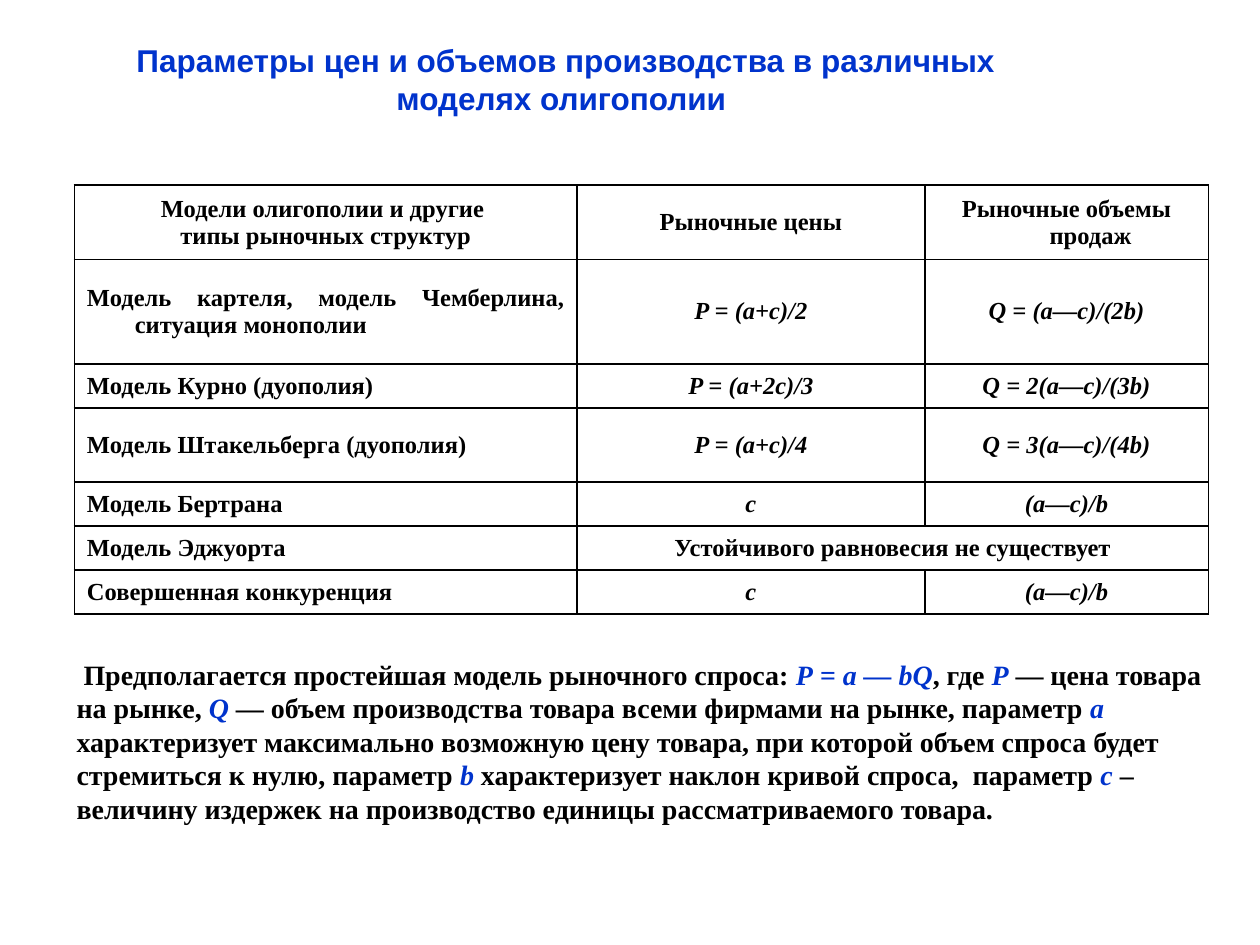
import pptx
import pptx.dml.color
import pptx.enum.text
import pptx.oxml
import pptx.oxml.ns
import pptx.util

BLACK = pptx.dml.color.RGBColor(0x00, 0x00, 0x00)
WHITE = pptx.dml.color.RGBColor(0xFF, 0xFF, 0xFF)
BLUE = pptx.dml.color.RGBColor(0x00, 0x33, 0xCC)
SERIF = "Times New Roman"
ALIGN = pptx.enum.text.PP_ALIGN
WIDTH, HEIGHT = pptx.util.Inches(10), pptx.util.Inches(7.5)
HANGING = pptx.util.Inches(0.38)

TITLE = "Параметры цен и объемов производства в различных моделях олигополии "
COLUMN_SHARES = (3.99, 2.76, 2.25)
ROW_SHARES = (0.59, 0.83, 0.35, 0.59, 0.35, 0.35, 0.35)
HEADER = ("Модели олигополии и другие \nтипы рыночных структур", "Рыночные цены", "Рыночные объемы продаж")
MODELS = (
    ("Модель картеля, модель Чемберлина, ситуация монополии", "P = (a+c)/2", "Q = (a—c)/(2b)"),
    ("Модель Курно (дуополия)", "P = (a+2c)/3", "Q = 2(a—c)/(3b)"),
    ("Модель Штакельберга (дуополия)", "P = (a+c)/4", "Q = 3(a—c)/(4b)"),
    ("Модель Бертрана ", "c", "(a—c)/b"),
    ("Модель Эджуорта ", "Устойчивого равновесия не существует"),
    ("Совершенная конкуренция", "c", "(a—c)/b"),
)
DEMAND_NOTE = (
    " Предполагается простейшая модель рыночного спроса: ", "Р = a — bQ",
    ", где ", "Р",
    " — цена товара на рынке, ", "Q ",
    "— объем производства товара всеми фирмами на рынке, параметр ", "а",
    " характеризует максимально возможную цену товара, при которой объем спроса "
    "будет стремиться к нулю, параметр ", "b",
    " характеризует наклон кривой спроса,  параметр ", "с",
    " –  величину издержек на производство единицы рассматриваемого товара.",
)


def share_box(left, top, width, height):
    """Turn shares of the slide's size into lengths."""
    return int(left * WIDTH), int(top * HEIGHT), int(width * WIDTH), int(height * HEIGHT)


def add_run(paragraph, text, size=14, font=SERIF, color=BLACK, italic=False):
    """Append one bold formatted run to a paragraph."""
    run = paragraph.add_run()
    run.text = text
    run.font.size = pptx.util.Pt(size)
    run.font.name = font
    run.font.bold = True
    run.font.italic = italic
    run.font.color.rgb = color


def add_text_paragraph(slide, box, align):
    """Add a wrapping text box and return its paragraph."""
    frame = slide.shapes.add_textbox(*box).text_frame
    frame.word_wrap = True
    paragraph = frame.paragraphs[0]
    paragraph.alignment = align
    return paragraph


def set_borders(cell):
    """Draw a thin black line on every side of a cell."""
    properties = cell._tc.get_or_add_tcPr()
    namespace = pptx.oxml.ns.nsdecls("a")
    for position, side in enumerate(("lnL", "lnR", "lnT", "lnB")):
        line = pptx.oxml.parse_xml(
            f'<a:{side} {namespace} w="{pptx.util.Pt(1)}"><a:solidFill>'
            f'<a:srgbClr val="{BLACK}"/></a:solidFill></a:{side}>'
        )
        properties.insert(position, line)


def fill_cell(cell, text, align, italic):
    """Write hanging paragraphs into a cell, one for each line of text."""
    cell.vertical_anchor = pptx.enum.text.MSO_ANCHOR.MIDDLE
    frame = cell.text_frame
    for index, line in enumerate(text.split("\n")):
        paragraph = frame.add_paragraph() if index else frame.paragraphs[0]
        paragraph.alignment = align
        properties = paragraph._p.get_or_add_pPr()
        properties.set("marL", str(HANGING))
        properties.set("indent", str(-HANGING))
        add_run(paragraph, line, italic=italic)


def add_title(slide, box):
    """Place the centred blue title."""
    add_run(add_text_paragraph(slide, box, ALIGN.CENTER), TITLE, size=18, font="Arial", color=BLUE)


def add_models_table(slide, box):
    """Place the table of prices and sales volumes by model."""
    rows = (HEADER,) + MODELS
    table = slide.shapes.add_table(len(rows), len(HEADER), *box).table
    table.first_row = table.horz_banding = False
    for column, share in zip(table.columns, COLUMN_SHARES):
        column.width = int(box[2] * share / sum(COLUMN_SHARES))
    for row, share in zip(table.rows, ROW_SHARES):
        row.height = int(box[3] * share / sum(ROW_SHARES))
    for cell in table.iter_cells():
        cell.fill.solid()
        cell.fill.fore_color.rgb = WHITE
        set_borders(cell)
    for row_index, texts in enumerate(rows):
        if len(texts) < len(HEADER):
            table.cell(row_index, len(texts) - 1).merge(table.cell(row_index, len(HEADER) - 1))
        for column_index, text in enumerate(texts):
            is_name = row_index > 0 and column_index == 0
            is_formula = row_index > 0 and column_index > 0 and len(texts) == len(HEADER)
            align = ALIGN.JUSTIFY if is_name else ALIGN.CENTER
            fill_cell(table.cell(row_index, column_index), text, align, is_formula)


def add_demand_note(slide, box):
    """Place the note on demand, with its symbols in blue italics."""
    paragraph = add_text_paragraph(slide, box, ALIGN.LEFT)
    for index, text in enumerate(DEMAND_NOTE):
        is_symbol = index % 2 == 1
        add_run(paragraph, text, size=16, color=BLUE if is_symbol else BLACK, italic=is_symbol)


def main():
    """Build and save the slide."""
    presentation = pptx.Presentation()
    presentation.slide_width, presentation.slide_height = WIDTH, HEIGHT
    slide = presentation.slides.add_slide(presentation.slide_layouts[6])
    add_models_table(slide, share_box(0.059, 0.196, 0.9, 0.454))
    add_title(slide, share_box(0.059, 0.037, 0.78, 0.093))
    add_demand_note(slide, share_box(0.051, 0.689, 0.913, 0.192))
    presentation.save("out.pptx")


if __name__ == "__main__":
    main()
